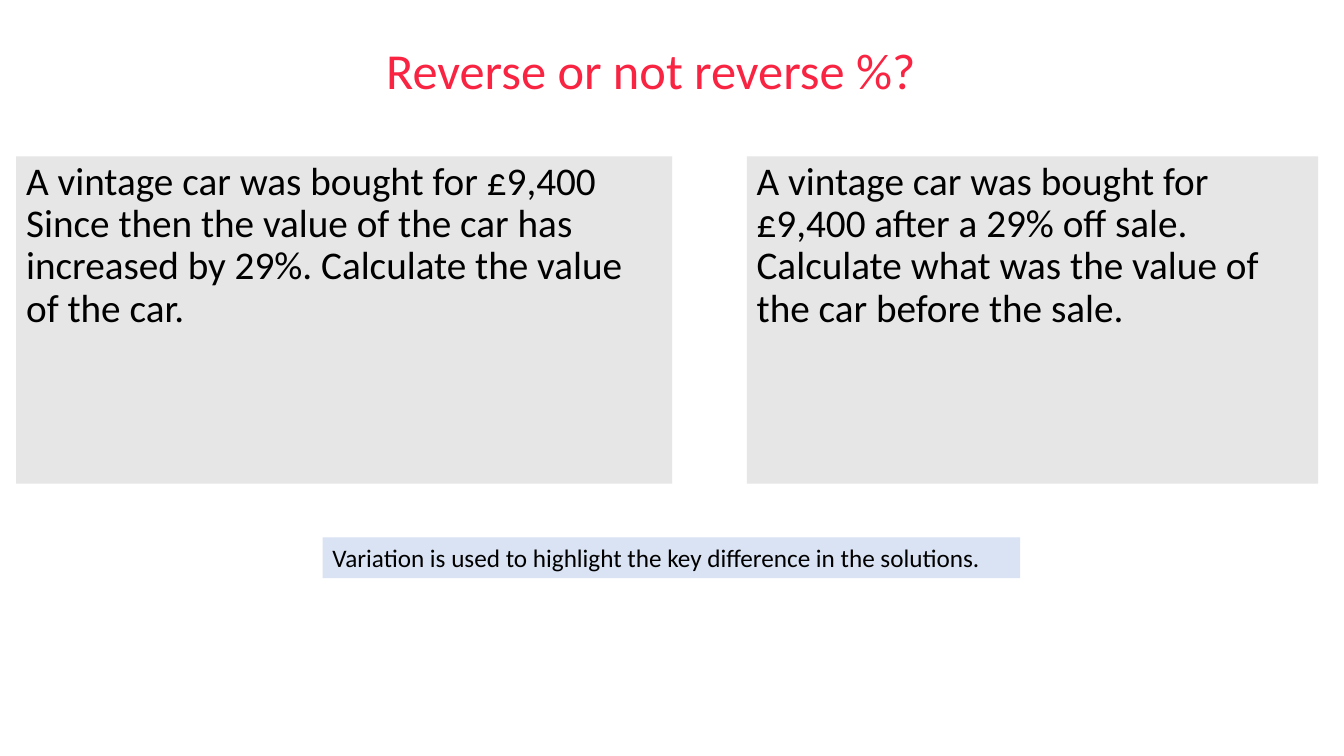
from pptx import Presentation
from pptx.dml.color import RGBColor
from pptx.enum.text import MSO_ANCHOR, PP_ALIGN
from pptx.util import Cm, Pt

TOP, MIDDLE = MSO_ANCHOR.TOP, MSO_ANCHOR.MIDDLE
LEFT, CENTER = PP_ALIGN.LEFT, PP_ALIGN.CENTER

FONT = "Calibri"
RED, BLACK, GREY, PALE_BLUE = "F82442", "000000", "E7E6E6", "DAE3F3"

TITLE = "Reverse or not reverse %?"
# left, width, question
QUESTIONS = [
    (0.41, 16.53, "A vintage car was bought for £9,400 Since then the value of the car "
                  "has increased by 29%. Calculate the value of the car."),
    (18.82, 14.4, "A vintage car was bought for £9,400 after a 29% off sale. "
                  "Calculate what was the value of the car before the sale."),
]
QUESTION_TOP, QUESTION_HEIGHT = 3.94, 8.25
TEACHING_NOTE = "Variation is used to highlight the key difference in the solutions."


def color(hex_code):
    return RGBColor.from_string(hex_code)


def add_text(slide, text, box, size, ink=BLACK, fill=None, anchor=TOP,
             align=LEFT, line_spacing=1.0, space_before=0):
    panel = slide.shapes.add_textbox(*(Cm(length) for length in box))
    if fill:
        panel.fill.solid()
        panel.fill.fore_color.rgb = color(fill)
    frame = panel.text_frame
    frame.word_wrap = True
    frame.vertical_anchor = anchor
    paragraph = frame.paragraphs[0]
    paragraph.alignment = align
    paragraph.line_spacing = line_spacing
    paragraph.space_before = Pt(space_before)
    run = paragraph.add_run()
    run.text = text
    run.font.name = FONT
    run.font.size = Pt(size)
    run.font.color.rgb = color(ink)


def main():
    deck = Presentation()
    deck.slide_width, deck.slide_height = Cm(33.87), Cm(19.05)
    slide = deck.slides.add_slide(deck.slide_layouts[6])

    add_text(slide, TITLE, (1.8, 0, 29.21, 3.68), 36, ink=RED,
             anchor=MIDDLE, align=CENTER, line_spacing=0.9)
    for left, width, question in QUESTIONS:
        add_text(slide, question, (left, QUESTION_TOP, width, QUESTION_HEIGHT), 28,
                 fill=GREY, line_spacing=0.9, space_before=10)
    add_text(slide, TEACHING_NOTE, (8.13, 13.54, 17.58, 1.03), 18, fill=PALE_BLUE)

    deck.save("out.pptx")


if __name__ == "__main__":
    main()
